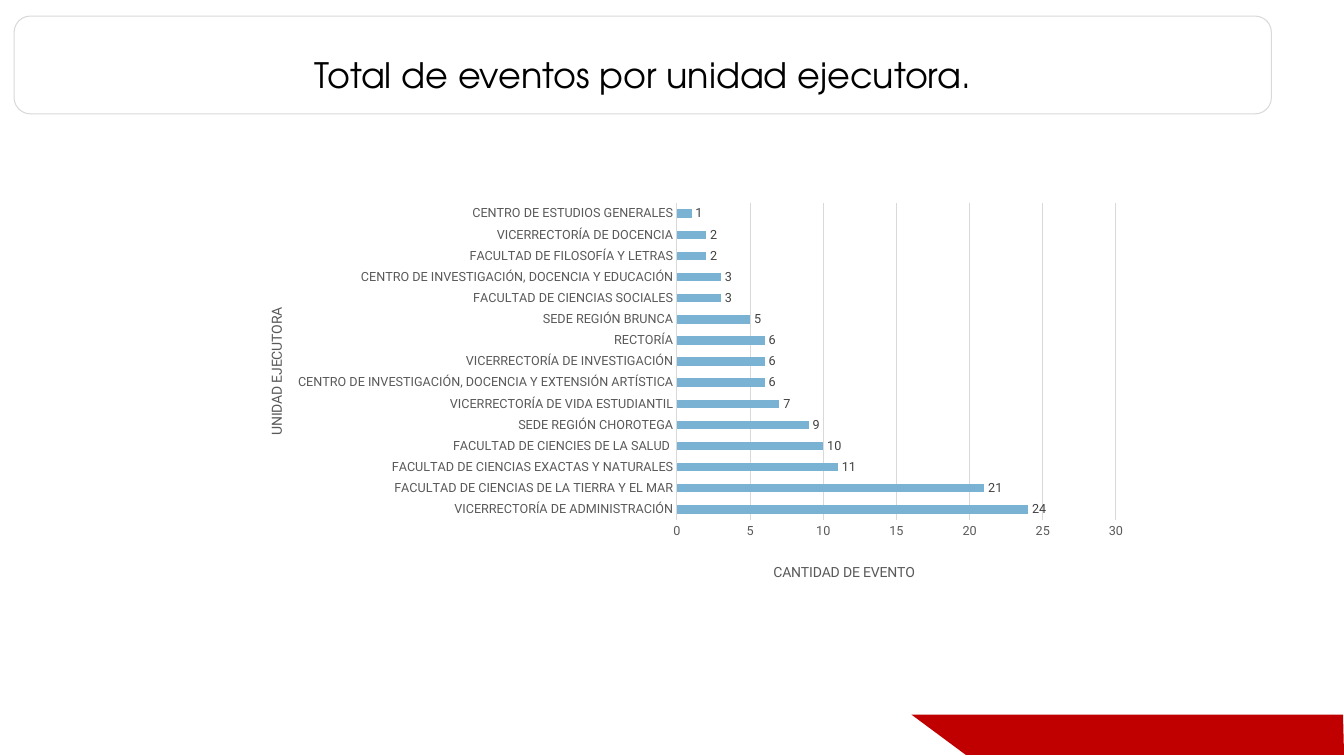
from dataclasses import dataclass

import lxml.etree
import pptx
import pptx.chart.data
import pptx.dml.color
import pptx.enum.chart
import pptx.enum.shapes
import pptx.enum.text
import pptx.oxml.ns
import pptx.util

Inches = pptx.util.Inches
Pt = pptx.util.Pt

EVENTS_BY_UNIT = {
    "VICERRECTORÍA DE ADMINISTRACIÓN": 24,
    "FACULTAD DE CIENCIAS DE LA TIERRA Y EL MAR": 21,
    "FACULTAD DE CIENCIAS EXACTAS Y NATURALES": 11,
    "FACULTAD DE CIENCIES DE LA SALUD ": 10,
    "SEDE REGIÓN CHOROTEGA": 9,
    "VICERRECTORÍA DE VIDA ESTUDIANTIL": 7,
    "CENTRO DE INVESTIGACIÓN, DOCENCIA Y EXTENSIÓN ARTÍSTICA": 6,
    "VICERRECTORÍA DE INVESTIGACIÓN": 6,
    "RECTORÍA": 6,
    "SEDE REGIÓN BRUNCA": 5,
    "FACULTAD DE CIENCIAS SOCIALES": 3,
    "CENTRO DE INVESTIGACIÓN, DOCENCIA Y EDUCACIÓN": 3,
    "FACULTAD DE FILOSOFÍA Y LETRAS": 2,
    "VICERRECTORÍA DE DOCENCIA": 2,
    "CENTRO DE ESTUDIOS GENERALES": 1,
}


@dataclass(frozen=True)
class Theme:
    heading_font: str = "TeX Gyre Adventor"
    body_font: str = "Roboto"
    heading_size: float = 25
    axis_title_size: float = 10
    label_size: float = 9
    black: str = "000000"
    axis_text: str = "595959"
    value_text: str = "404040"
    rule: str = "D9D9D9"
    bar: str = "7AB2D3"
    accent: str = "C00000"


def rgb(value):
    return pptx.dml.color.RGBColor.from_string(value)


def apply(target, formats):
    for name, value in formats.items():
        setattr(target, name, value)


def place(parent, index, **fractions):
    """Fix a chart part's place, in fractions of the chart's size."""
    qn = pptx.oxml.ns.qn
    for previous in parent.findall(qn("c:layout")):
        parent.remove(previous)
    layout = lxml.etree.Element(qn("c:layout"))
    manual = lxml.etree.SubElement(layout, qn("c:manualLayout"))
    settings = {"xMode": "edge", "yMode": "edge", **fractions}
    if "w" in fractions:
        settings = {"layoutTarget": "inner", **settings}
    for name, value in settings.items():
        lxml.etree.SubElement(manual, qn(f"c:{name}")).set("val", str(value))
    parent.insert(index, layout)


class SlideBuilder:
    def __init__(self, slide, theme):
        self.slide = slide
        self.theme = theme

    def style_font(self, font, name, size, color):
        apply(font, {"name": name, "size": Pt(size), "bold": False})
        font.color.rgb = rgb(color)

    def style_rule(self, line):
        line.color.rgb = rgb(self.theme.rule)
        line.width = Pt(0.75)

    def polygon(self, points, color):
        start, *rest = [(Inches(x), Inches(y)) for x, y in points]
        builder = self.slide.shapes.build_freeform(*start)
        builder.add_line_segments(rest, close=True)
        shape = builder.convert_to_shape()
        shape.shadow.inherit = False
        shape.fill.solid()
        shape.fill.fore_color.rgb = rgb(color)
        shape.line.fill.background()

    def heading(self, text, left, top, width, height):
        box = self.slide.shapes.add_shape(
            pptx.enum.shapes.MSO_SHAPE.ROUNDED_RECTANGLE,
            Inches(left), Inches(top), Inches(width), Inches(height))
        box.shadow.inherit = False
        box.fill.background()
        self.style_rule(box.line)
        frame = box.text_frame
        inset = Inches(0.13)
        apply(frame, {
            "word_wrap": True,
            "vertical_anchor": pptx.enum.text.MSO_ANCHOR.BOTTOM,
            "margin_left": inset, "margin_right": inset,
            "margin_top": inset, "margin_bottom": inset,
        })
        paragraph = frame.paragraphs[0]
        apply(paragraph, {"text": text, "line_spacing": 0.9,
                          "alignment": pptx.enum.text.PP_ALIGN.CENTER})
        self.style_font(paragraph.font, self.theme.heading_font,
                        self.theme.heading_size, self.theme.black)

    def axis(self, axis, title, x, y):
        theme = self.theme
        apply(axis, {
            "major_tick_mark": pptx.enum.chart.XL_TICK_MARK.NONE,
            "minor_tick_mark": pptx.enum.chart.XL_TICK_MARK.NONE,
        })
        axis.format.line.fill.background()
        self.style_font(axis.tick_labels.font, theme.body_font,
                        theme.label_size, theme.axis_text)
        frame = axis.axis_title.text_frame
        frame.text = title
        self.style_font(frame.paragraphs[0].runs[0].font, theme.body_font,
                        theme.axis_title_size, theme.axis_text)
        place(frame._txBody.getparent().getparent(), 1, x=x, y=y)

    def bar_chart(self, values, left, top, width, height):
        theme = self.theme
        chart_data = pptx.chart.data.CategoryChartData()
        chart_data.categories = list(values)
        chart_data.add_series("Series 1", list(values.values()))
        chart = self.slide.shapes.add_chart(
            pptx.enum.chart.XL_CHART_TYPE.BAR_CLUSTERED,
            Inches(left), Inches(top), Inches(width), Inches(height),
            chart_data).chart
        apply(chart, {"has_legend": False, "has_title": False})
        self.style_font(chart.font, theme.body_font,
                        theme.axis_title_size, theme.black)

        self.axis(chart.category_axis, "UNIDAD EJECUTORA", 0.03, 0.28)
        self.axis(chart.value_axis, "CANTIDAD DE EVENTO", 0.59, 0.93)
        chart.category_axis.has_major_gridlines = False
        apply(chart.value_axis, {"minimum_scale": 0, "maximum_scale": 30,
                                 "major_unit": 5,
                                 "has_major_gridlines": True})
        self.style_rule(chart.value_axis.major_gridlines.format.line)

        plot = chart.plots[0]
        apply(plot, {"gap_width": 150, "vary_by_categories": False,
                     "has_data_labels": True})
        events = plot.series[0]
        events.format.fill.solid()
        events.format.fill.fore_color.rgb = rgb(theme.bar)
        apply(plot.data_labels, {
            "show_value": True,
            "position": pptx.enum.chart.XL_LABEL_POSITION.OUTSIDE_END,
        })
        self.style_font(plot.data_labels.font, theme.body_font,
                        theme.label_size, theme.value_text)
        plot_area = chart._chartSpace.find(".//" + pptx.oxml.ns.qn("c:plotArea"))
        place(plot_area, 0, x=0.486, y=0.022, w=0.486, h=0.804)


def main():
    presentation = pptx.Presentation()
    apply(presentation, {"slide_width": Inches(13.33),
                         "slide_height": Inches(7.5)})
    slide = presentation.slides.add_slide(presentation.slide_layouts[6])
    theme = Theme()
    builder = SlideBuilder(slide, theme)
    builder.polygon([(13.32, 7.09), (9.04, 7.09), (9.58, 7.49), (13.33, 7.49)],
                    theme.accent)
    builder.heading("Total de eventos por unidad ejecutora.",
                    0.14, 0.16, 12.47, 0.97)
    builder.bar_chart(EVENTS_BY_UNIT, 2.36, 1.93, 8.96, 3.91)
    presentation.save("out.pptx")


if __name__ == "__main__":
    main()
